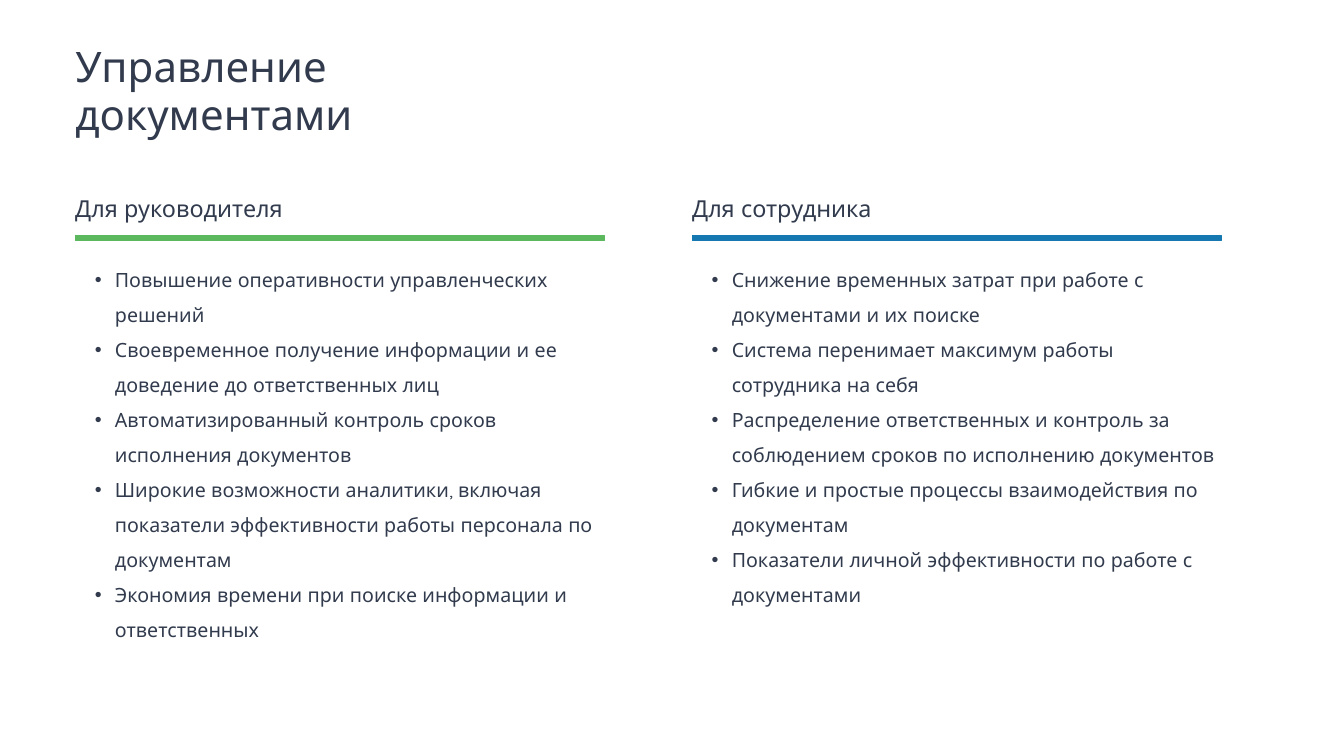
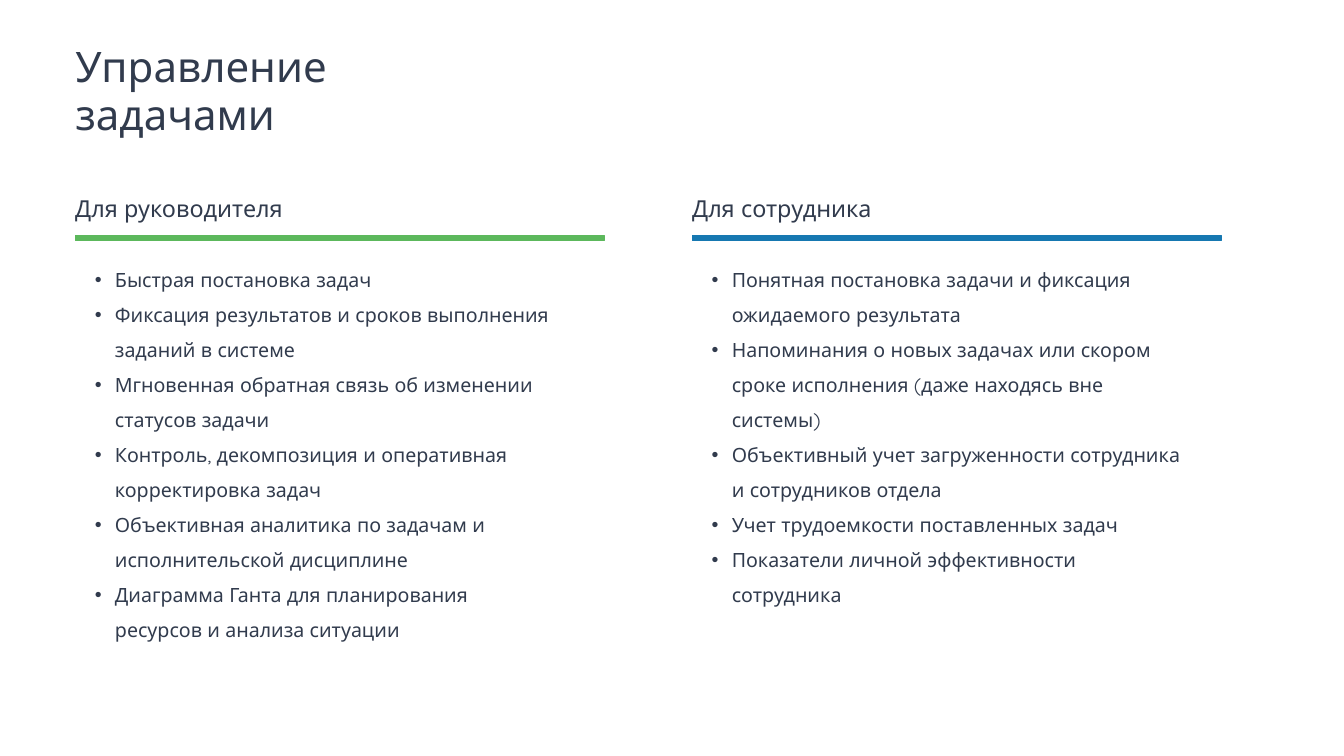
from dataclasses import dataclass

from lxml import etree
from pptx import Presentation
from pptx import util as u
from pptx.dml.color import RGBColor
from pptx.enum import shapes, text
from pptx.oxml.ns import qn

# Shared style
FONT = "Quicksand"
INK = "313B4D"
TITLE_ONLY = 5
LEFT_MARGIN = 1.12
HEADING_TOP, RULE_TOP, LIST_TOP = 2.85, 3.51, 3.82
RULE_WIDTH, RULE_HEIGHT = 7.87, 0.07
BULLET_INDENT, BULLET_HANG = 0.59, -0.3


@dataclass(frozen=True)
class TextStyle:
    size: float
    line_spacing: float
    bulleted: bool = False


@dataclass(frozen=True)
class Audience:
    heading: str
    left: float
    heading_width: float
    accent: str


@dataclass(frozen=True)
class Benefits:
    width: float
    height: float
    items: tuple[str, ...]


@dataclass(frozen=True)
class Topic:
    title: str
    benefits: tuple[Benefits, Benefits]


TITLE = TextStyle(45, 52)
HEADING = TextStyle(25, 32.5)
BULLETS = TextStyle(21, 37.5, bulleted=True)

AUDIENCES = (
    Audience("Для руководителя", LEFT_MARGIN, 6.33, "5CB85C"),
    Audience("Для сотрудника", 10.3, 5.28, "1678B1"),
)

# Slide content
TOPICS = (
    Topic("Управление документами", (
        Benefits(7.89, 5.13, (
            "Повышение оперативности управленческих решений",
            "Своевременное получение информации и ее доведение до ответственных лиц",
            "Автоматизированный контроль сроков исполнения документов",
            "Широкие возможности аналитики, включая показатели эффективности "
            "работы персонала по документам",
            "Экономия времени при поиске информации и ответственных",
        )),
        Benefits(7.89, 5.68, (
            "Снижение временных затрат при работе с документами и их поиске",
            "Система перенимает максимум работы сотрудника на себя",
            "Распределение ответственных и контроль за соблюдением сроков "
            "по исполнению документов",
            "Гибкие и простые процессы взаимодействия по документам",
            "Показатели личной эффективности по работе с документами",
        )),
    )),
    Topic("Управление задачами", (
        Benefits(7.15, 5.71, (
            "Быстрая постановка задач",
            "Фиксация результатов и сроков выполнения заданий в системе",
            "Мгновенная обратная связь об изменении статусов задачи",
            "Контроль, декомпозиция и оперативная корректировка задач",
            "Объективная аналитика по задачам и исполнительской дисциплине",
            "Диаграмма Ганта для планирования ресурсов и анализа ситуации",
        )),
        Benefits(7.37, 4.64, (
            "Понятная постановка задачи и фиксация ожидаемого результата",
            "Напоминания о новых задачах или скором сроке исполнения "
            "(даже находясь вне системы)",
            "Объективный учет загруженности сотрудника и сотрудников отдела",
            "Учет трудоемкости поставленных задач",
            "Показатели личной эффективности сотрудника",
        )),
    )),
)


def color(value: str) -> RGBColor:
    return RGBColor.from_string(value)


def inches(*lengths: float) -> list[u.Length]:
    return [u.Inches(length) for length in lengths]


def add_bullet(para) -> None:
    para.level = 1
    properties = para._p.get_or_add_pPr()
    properties.set("marL", str(u.Inches(BULLET_INDENT)))
    properties.set("indent", str(u.Inches(BULLET_HANG)))
    etree.SubElement(properties, qn("a:buFont"), typeface="Arial")
    etree.SubElement(properties, qn("a:buChar"), char="•")


def write_text(box, content: str, style: TextStyle) -> None:
    frame = box.text_frame
    frame.text = content
    frame.word_wrap = True
    frame.auto_size = text.MSO_AUTO_SIZE.SHAPE_TO_FIT_TEXT
    frame.vertical_anchor = text.MSO_ANCHOR.TOP
    frame.margin_left = frame.margin_right = 0
    frame.margin_top = frame.margin_bottom = 0
    for para in frame.paragraphs:
        para.alignment = text.PP_ALIGN.LEFT
        para.line_spacing = u.Pt(style.line_spacing)
        para.space_before = para.space_after = u.Pt(0)
        if style.bulleted:
            add_bullet(para)
        for span in para.runs:
            span.font.name = FONT
            span.font.size = u.Pt(style.size)
            span.font.color.rgb = color(INK)


def place_title(page, title: str) -> None:
    box = page.shapes.title
    box.left, box.top, box.width, box.height = inches(LEFT_MARGIN, 0.63, 6.08, 1.46)
    write_text(box, title, TITLE)


def add_column(page, audience: Audience, benefits: Benefits) -> None:
    # Heading
    heading = page.shapes.add_textbox(
        *inches(audience.left, HEADING_TOP, audience.heading_width, 0.42))
    write_text(heading, audience.heading, HEADING)

    # Coloured rule
    rule = page.shapes.add_shape(
        shapes.MSO_SHAPE.RECTANGLE,
        *inches(audience.left, RULE_TOP, RULE_WIDTH, RULE_HEIGHT))
    rule.shadow.inherit = False
    rule.fill.solid()
    rule.fill.fore_color.rgb = color(audience.accent)
    rule.line.color.rgb = color(audience.accent)
    rule.line.width = u.Pt(0.75)

    # Bulleted list
    listing = page.shapes.add_textbox(
        *inches(audience.left, LIST_TOP, benefits.width, benefits.height))
    write_text(listing, "\n".join(benefits.items), BULLETS)


def main() -> None:
    deck = Presentation()
    deck.slide_width, deck.slide_height = inches(20, 11.25)
    for topic in TOPICS:
        page = deck.slides.add_slide(deck.slide_layouts[TITLE_ONLY])
        place_title(page, topic.title)
        for audience, benefits in zip(AUDIENCES, topic.benefits):
            add_column(page, audience, benefits)
    deck.save("out.pptx")


if __name__ == "__main__":
    main()
